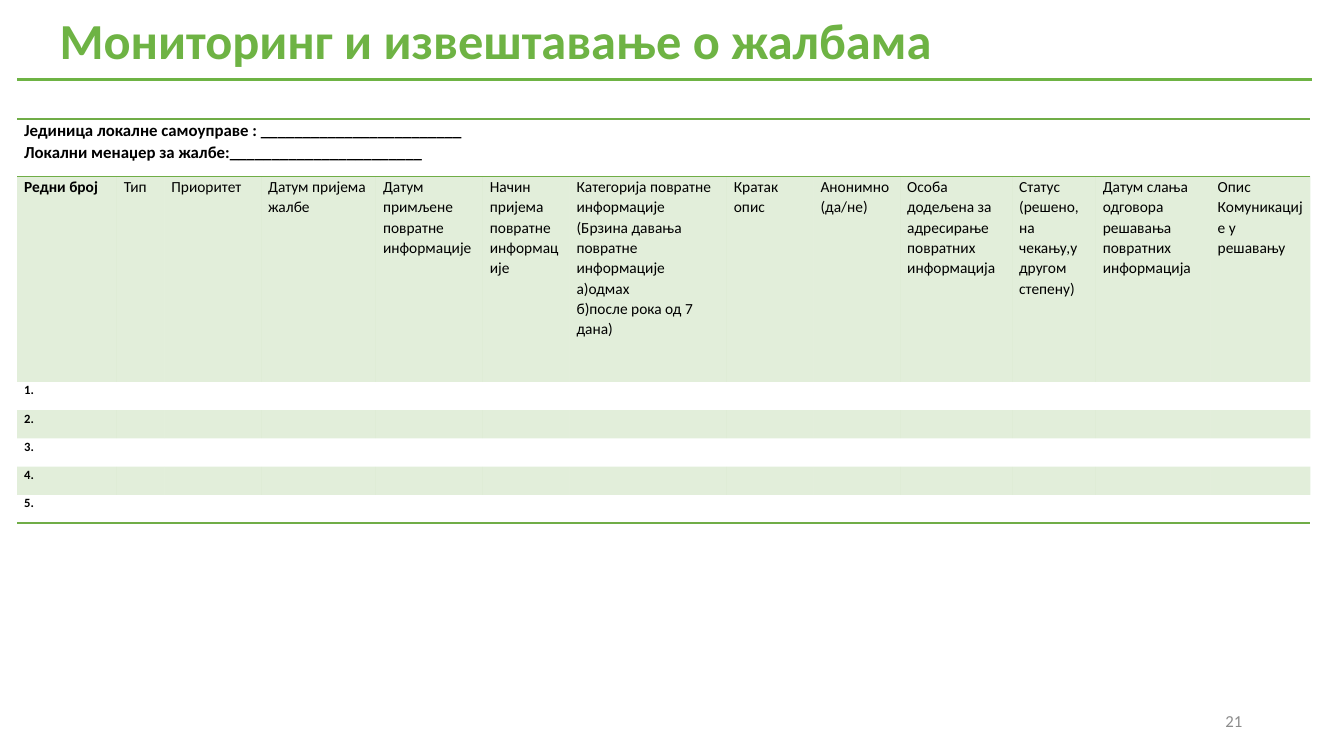
from dataclasses import dataclass

from lxml.etree import SubElement
from pptx import Presentation
from pptx.dml.color import RGBColor
from pptx.enum.shapes import MSO_CONNECTOR as Connector
from pptx.enum.text import MSO_ANCHOR as Anchor, MSO_AUTO_SIZE as AutoSize, PP_ALIGN as Align
from pptx.oxml import parse_xml
from pptx.oxml.ns import nsdecls, qn
from pptx.util import Inches, Pt


@dataclass(frozen=True)
class Theme:
    font: str = "Calibri"
    title: str = "6EB344"
    table: str = "70AD47"
    text: str = "000000"
    muted: str = "8C8C8C"
    title_size: int = 36
    caption_size: int = 12
    header_size: int = 11
    number_size: int = 9
    rule_width: float = 1.75
    border_width: int = 1
    band_opacity: int = 20
    line_spacing: float = 1.07


THEME = Theme()
NO_GRID_STYLE = "{2D5ABB26-0587-4C30-8999-92F81FD0307C}"
LEFT, RIGHT = 0.17, 13.01
RULE_TOP = 0.79

CAPTION = (
    "Јединица локалне самоуправе : ________________________\n"
    "Локални менаџер за жалбе:_______________________"
)
# Heading and width of each column
COLUMNS = [
    ("Редни број", 0.99),
    ("Тип", 0.47),
    ("Приоритет", 0.96),
    ("Датум пријема жалбе", 1.14),
    ("Датум примљене повратне информације", 1.06),
    ("Начин пријема повратне информације", 0.86),
    ("Категорија повратне информације\n"
     "(Брзина давања повратне информације а)одмах\n"
     "б)после рока од 7 дана)", 1.56),
    ("Кратак опис", 0.86),
    ("Анонимно (да/не)", 0.86),
    ("Особа додељена за адресирање повратних информација", 1.11),
    ("Статус (решено, на чекању,у другом степену)", 0.83),
    ("Датум слања одговора решавања повратних информација", 1.14),
    ("Опис Комуникације у решавању", 0.99),
]
ENTRY_COUNT = 5
ROW_HEIGHTS = [0.57, 2.04] + [0.28] * ENTRY_COUNT


def write_text(frame, text, size, color, bold=False, align=None, spacing=None):
    frame.text = text
    for para in frame.paragraphs:
        para.alignment = align
        para.line_spacing = spacing
        for span in para.runs:
            span.font.name = THEME.font
            span.font.size = Pt(size)
            span.font.bold = bold
            span.font.color.rgb = RGBColor.from_string(color)


def add_title(page, text):
    title = page.shapes.title
    title.left, title.top = Inches(0.04), Inches(0.07)
    title.width, title.height = Inches(13.33), Inches(0.72)
    frame = title.text_frame
    frame.auto_size = AutoSize.NONE
    frame.word_wrap = True
    frame.vertical_anchor = Anchor.MIDDLE
    frame.margin_left = Inches(0.55)
    write_text(frame, text, THEME.title_size, THEME.title, True, Align.LEFT, 0.9)


def add_rule(page, top):
    rule = page.shapes.add_connector(
        Connector.STRAIGHT, Inches(LEFT), Inches(top), Inches(RIGHT), Inches(top))
    rule.line.color.rgb = RGBColor.from_string(THEME.title)
    rule.line.width = Pt(THEME.rule_width)
    SubElement(rule._element.spPr, qn("a:effectLst"))


def add_page_number(page, number):
    box = page.shapes.add_textbox(Inches(9.42), Inches(6.95), Inches(3), Inches(0.4))
    frame = box.text_frame
    frame.word_wrap = True
    frame.vertical_anchor = Anchor.MIDDLE
    write_text(frame, number, THEME.caption_size, THEME.muted, align=Align.RIGHT)


def set_borders(cell, sides):
    """Draw the given sides, named in schema order: lnT before lnB."""
    for side in sides:
        cell._tc.get_or_add_tcPr().append(parse_xml(
            f'<a:{side} {nsdecls("a")} w="{Pt(THEME.border_width)}"><a:solidFill>'
            f'<a:srgbClr val="{THEME.table}"/></a:solidFill></a:{side}>'))


def set_band(cell, banded):
    if not banded:
        cell.fill.background()
        return
    cell.fill.solid()
    cell.fill.fore_color.rgb = RGBColor.from_string(THEME.table)
    color = cell._tc.tcPr.find(".//" + qn("a:srgbClr"))
    SubElement(color, qn("a:alpha"), val=str(THEME.band_opacity * 1000))


def fill_cell(cell, text, size, bold):
    cell.margin_left = cell.margin_right = Inches(0.07)
    cell.margin_top = cell.margin_bottom = 0
    write_text(cell.text_frame, text, size, THEME.text, bold, spacing=THEME.line_spacing)
    if not text:
        # Keeps an empty cell from stretching its row
        para = cell.text_frame.paragraphs[0]
        SubElement(para._p, qn("a:endParaRPr"), sz=str(size * 100))


def add_complaints_table(page):
    blanks = [""] * (len(COLUMNS) - 1)
    rows = [[CAPTION] + blanks, [heading for heading, _ in COLUMNS]]
    rows += [[f"{number}."] + blanks for number in range(1, ENTRY_COUNT + 1)]
    sizes = [THEME.caption_size, THEME.header_size] + [THEME.number_size] * ENTRY_COUNT
    borders = {0: ("lnT", "lnB"), len(rows) - 1: ("lnB",)}

    frame = page.shapes.add_table(
        len(rows), len(COLUMNS), Inches(LEFT), Inches(1.18),
        Inches(RIGHT - LEFT), Inches(sum(ROW_HEIGHTS)))
    table = frame.table
    table.first_row = table.horz_banding = False
    table._tbl.tblPr.find(qn("a:tableStyleId")).text = NO_GRID_STYLE

    for column, (_, width) in zip(table.columns, COLUMNS):
        column.width = Inches(width)
    for row, height in zip(table.rows, ROW_HEIGHTS):
        row.height = Inches(height)

    for r, texts in enumerate(rows):
        for c, text in enumerate(texts):
            cell = table.cell(r, c)
            fill_cell(cell, text, sizes[r], bold=c == 0)
            set_borders(cell, borders.get(r, ()))
            set_band(cell, banded=r % 2 == 1)
    table.cell(0, 0).merge(table.cell(0, len(COLUMNS) - 1))


def main():
    deck = Presentation()
    deck.slide_width, deck.slide_height = Inches(13.33), Inches(7.5)
    page = deck.slides.add_slide(deck.slide_layouts[5])
    add_complaints_table(page)
    add_page_number(page, "21")
    add_title(page, "Мониторинг и извештавање о жалбама")
    add_rule(page, RULE_TOP)
    deck.save("out.pptx")


if __name__ == "__main__":
    main()
